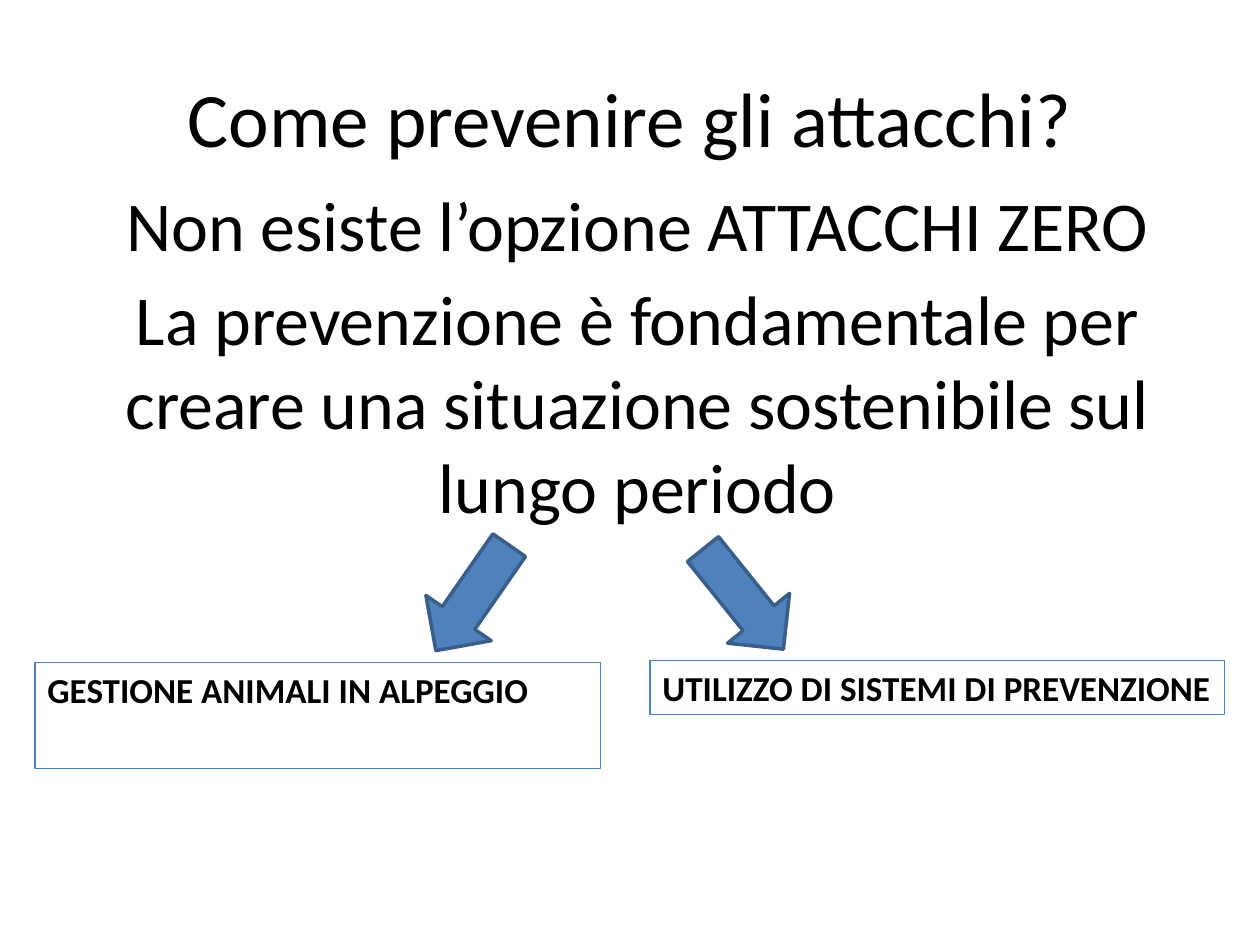
from pptx import Presentation
from pptx.dml.color import RGBColor
from pptx.enum.shapes import MSO_SHAPE
from pptx.enum.text import MSO_ANCHOR, PP_ALIGN
from pptx.util import Pt

BLACK, BLUE, DARK_BLUE = "000000", "4F81BD", "395E89"


def color(hex_string):
    return RGBColor.from_string(hex_string)


def add_text(paragraph, text, size, align, bold=False):
    paragraph.alignment = align
    run = paragraph.add_run()
    run.text = text
    run.font.name = "Calibri"
    run.font.size = Pt(size)
    run.font.bold = bold
    run.font.color.rgb = color(BLACK)


prs = Presentation()
prs.slide_width, prs.slide_height = Pt(720), Pt(540)
slide = prs.slides.add_slide(prs.slide_layouts[5])

# Main message
message = slide.shapes.add_textbox(Pt(40.3), Pt(100), Pt(648), Pt(215.3)).text_frame
message.word_wrap = True
add_text(message.paragraphs[0], "Non esiste l’opzione ATTACCHI ZERO", 40, PP_ALIGN.CENTER)
prevention = message.add_paragraph()
prevention.space_before = Pt(6)
add_text(
    prevention,
    "La prevenzione è fondamentale per creare una situazione sostenibile sul lungo periodo",
    40,
    PP_ALIGN.CENTER,
)

# The two measures
measures = [
    ("GESTIONE ANIMALI IN ALPEGGIO", 20, 378.7, 323.3, 60.5),
    ("UTILIZZO DI SISTEMI DI PREVENZIONE", 371.5, 377.3, 328.3, 31),
]
for label, left, top, width, height in measures:
    measure = slide.shapes.add_shape(
        MSO_SHAPE.RECTANGLE, Pt(left), Pt(top), Pt(width), Pt(height)
    )
    measure.shadow.inherit = False
    measure.fill.background()
    measure.line.color.rgb = color(BLUE)
    measure.line.width = Pt(0.75)
    frame = measure.text_frame
    frame.word_wrap = True
    frame.vertical_anchor = MSO_ANCHOR.TOP
    add_text(frame.paragraphs[0], label, 20, PP_ALIGN.LEFT, bold=True)

# Title
title = slide.shapes.title
title.left, title.top, title.width, title.height = Pt(36), Pt(21.6), Pt(648), Pt(90)
title.text_frame.vertical_anchor = MSO_ANCHOR.MIDDLE
add_text(
    title.text_frame.paragraphs[0], "Come prevenire gli attacchi?", 44, PP_ALIGN.CENTER
)

# Arrows from the message to the measures
for left, top, angle in [(233.3, 319, 124.8), (388, 319.7, 51.2)]:
    arrow = slide.shapes.add_shape(
        MSO_SHAPE.RIGHT_ARROW, Pt(left), Pt(top), Pt(73.4), Pt(45.4)
    )
    arrow.rotation = angle
    arrow.shadow.inherit = False
    arrow.fill.solid()
    arrow.fill.fore_color.rgb = color(BLUE)
    arrow.line.color.rgb = color(DARK_BLUE)
    arrow.line.width = Pt(2)

prs.save("out.pptx")
